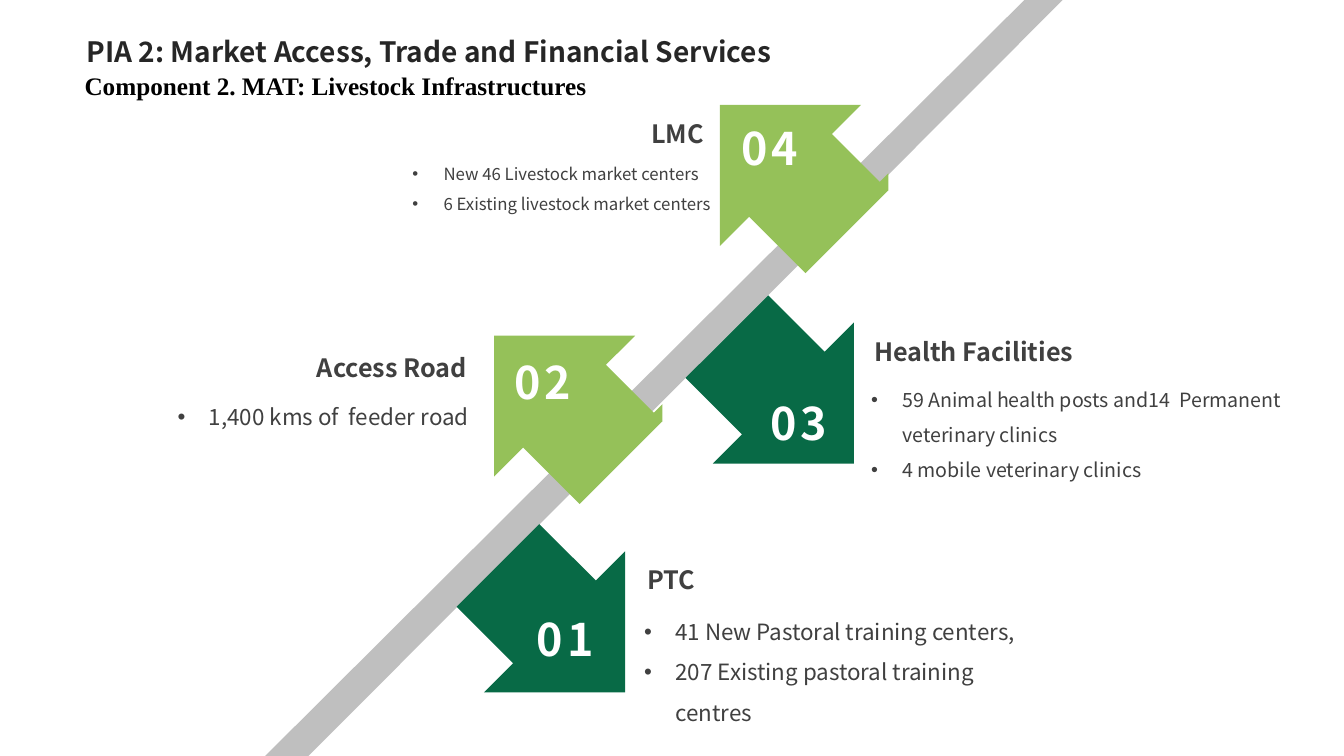
from dataclasses import dataclass

from pptx import Presentation
from pptx.dml.color import RGBColor
from pptx.enum.text import MSO_ANCHOR, MSO_AUTO_SIZE, PP_ALIGN
from pptx.oxml.ns import qn
from pptx.util import Inches, Pt
from lxml import etree


@dataclass(frozen=True)
class Theme:
    sans: str = "Noto Sans CJK SC"
    serif: str = "Times New Roman"
    road: str = "BFBFBF"
    light_green: str = "95C159"
    dark_green: str = "086A46"
    white: str = "FFFFFF"
    black: str = "000000"
    title: str = "262626"
    body: str = "404040"
    title_size: int = 20
    heading_size: int = 18
    number_size: int = 32


THEME = Theme()
TITLE_ONLY = 5
SIGN_SIZE = 1.67
SIGN_OUTLINE = [(1.67, 0.85), (1.11, 0.29), (1.4, 0), (0, 0),
                (0, 1.4), (0.29, 1.11), (0.85, 1.67)]
FLAP_OUTLINE = [(1.67, 0.68), (1.5, 0.85), (1.67, 0.85)]
ROAD_OUTLINE = [(2.63, 7.5), (10.19, -0.03), (10.55, -0.01), (3.06, 7.5)]
PLAIN_INSETS = (0.1, 0.05)
NUMBER_INSETS = (0.07, 0.04)
HEADING_INSETS = (0.18, 0)
LIST_INSETS = (0.18, 0.09)

# number, sign corner, number box corner, points up the road
SIGNS = [
    ("04", (7.14, 1.04), (7.28, 1.16), True),
    ("02", (4.9, 3.33), (5.03, 3.48), True),
    ("03", (6.8, 2.93), (7.57, 3.89), False),
    ("01", (4.53, 5.2), (5.25, 6.03), False),
]

# heading, heading box, heading alignment, list box, list size, list alignment, items
TOPICS = [
    ("Access Road", (2.81, 3.5, 2, 0.3), PP_ALIGN.RIGHT,
     (1.51, 3.78, 3.32, 0.53), 16, PP_ALIGN.RIGHT,
     ["1,400 kms of  feeder road"]),
    ("Health Facilities", (8.49, 3.34, 3.17, 0.3), PP_ALIGN.LEFT,
     (8.46, 3.64, 4.51, 1.59), 14, PP_ALIGN.LEFT,
     ["59 Animal health posts and14  Permanent veterinary clinics",
      "4 mobile veterinary clinics"]),
    ("LMC", (5.7, 1.17, 1.46, 0.3), PP_ALIGN.RIGHT,
     (3.91, 1.43, 3.32, 0.79), 12, PP_ALIGN.LEFT,
     ["New 46 Livestock market centers", "6 Existing livestock market centers"]),
    ("PTC", (6.24, 5.6, 1.7, 0.3), PP_ALIGN.LEFT,
     (6.21, 5.91, 4.33, 0.94), 16, PP_ALIGN.LEFT,
     ["41 New Pastoral training centers,", "207 Existing pastoral training centres"]),
]


def set_all(target, values):
    for name, value in values.items():
        setattr(target, name, value)


def add_outline(slide, points, color, corner=(0, 0)):
    """Draw a filled closed polygon whose points are measured from corner."""
    left, top = corner
    start, *rest = [(Inches(left + x), Inches(top + y)) for x, y in points]
    builder = slide.shapes.build_freeform(*start)
    builder.add_line_segments(rest, close=True)
    shape = builder.convert_to_shape()
    shape.shadow.inherit = False
    shape.fill.solid()
    shape.fill.fore_color.rgb = RGBColor.from_string(color)
    shape.line.fill.background()


def add_bullet(paragraph):
    properties = paragraph._p.get_or_add_pPr()
    properties.set("marL", str(Inches(0.31)))
    properties.set("indent", str(Inches(-0.31)))
    etree.SubElement(properties, qn("a:buFont")).set("typeface", "Arial")
    etree.SubElement(properties, qn("a:buChar")).set("char", "•")


def fill_text(shape, box, lines, size, color, font=THEME.sans, bold=True,
              align=PP_ALIGN.LEFT, insets=PLAIN_INSETS, wrap=True,
              bullets=False, tracking=0):
    """Place a text shape and write one formatted paragraph per line."""
    set_all(shape, dict(zip(("left", "top", "width", "height"), map(Inches, box))))
    frame = shape.text_frame
    side, end = map(Inches, insets)
    set_all(frame, {
        "margin_left": side, "margin_right": side,
        "margin_top": end, "margin_bottom": end,
        "word_wrap": wrap, "auto_size": MSO_AUTO_SIZE.SHAPE_TO_FIT_TEXT,
        "vertical_anchor": MSO_ANCHOR.TOP,
    })
    for index, line in enumerate(lines):
        paragraph = frame.add_paragraph() if index else frame.paragraphs[0]
        paragraph.alignment = align
        if bullets:
            add_bullet(paragraph)
            paragraph.line_spacing = 1.5
        run = paragraph.add_run()
        run.text = line
        set_all(run.font, {"name": font, "size": Pt(size), "bold": bold})
        run.font.color.rgb = RGBColor.from_string(color)
        if tracking:
            run.font._element.set("spc", str(tracking * 100))


def add_text(slide, box, *args, **options):
    shape = slide.shapes.add_textbox(*map(Inches, box))
    fill_text(shape, box, *args, **options)


def add_sign(slide, number, corner, number_corner, points_up):
    if points_up:
        add_outline(slide, FLAP_OUTLINE, THEME.light_green, corner)
        add_outline(slide, SIGN_OUTLINE, THEME.light_green, corner)
    else:
        turned = [(SIGN_SIZE - x, SIGN_SIZE - y) for x, y in SIGN_OUTLINE]
        add_outline(slide, turned, THEME.dark_green, corner)
    add_text(slide, (*number_corner, 0.75, 0.61), [number], THEME.number_size,
             THEME.white, insets=NUMBER_INSETS, wrap=False, tracking=3)


def add_topic(slide, heading, heading_box, heading_align,
              list_box, list_size, list_align, items):
    add_text(slide, list_box, items, list_size, THEME.body, bold=False,
             align=list_align, insets=LIST_INSETS, bullets=True)
    add_text(slide, heading_box, [heading], THEME.heading_size, THEME.body,
             align=heading_align, insets=HEADING_INSETS)


def main():
    presentation = Presentation()
    presentation.slide_width = Inches(13.33)
    presentation.slide_height = Inches(7.5)
    slide = presentation.slides.add_slide(presentation.slide_layouts[TITLE_ONLY])

    fill_text(slide.shapes.title, (0.76, 0.29, 7.1, 0.44),
              ["PIA 2: Market Access, Trade and Financial Services"],
              THEME.title_size, THEME.title, wrap=False)
    add_outline(slide, ROAD_OUTLINE, THEME.road)
    for sign in SIGNS:
        add_sign(slide, *sign)
    for topic in TOPICS:
        add_topic(slide, *topic)
    add_text(slide, (0.74, 0.65, 5.23, 0.4),
             ["Component 2. MAT: Livestock Infrastructures"],
             THEME.heading_size, THEME.black, font=THEME.serif, wrap=False)

    presentation.save("out.pptx")


if __name__ == "__main__":
    main()
